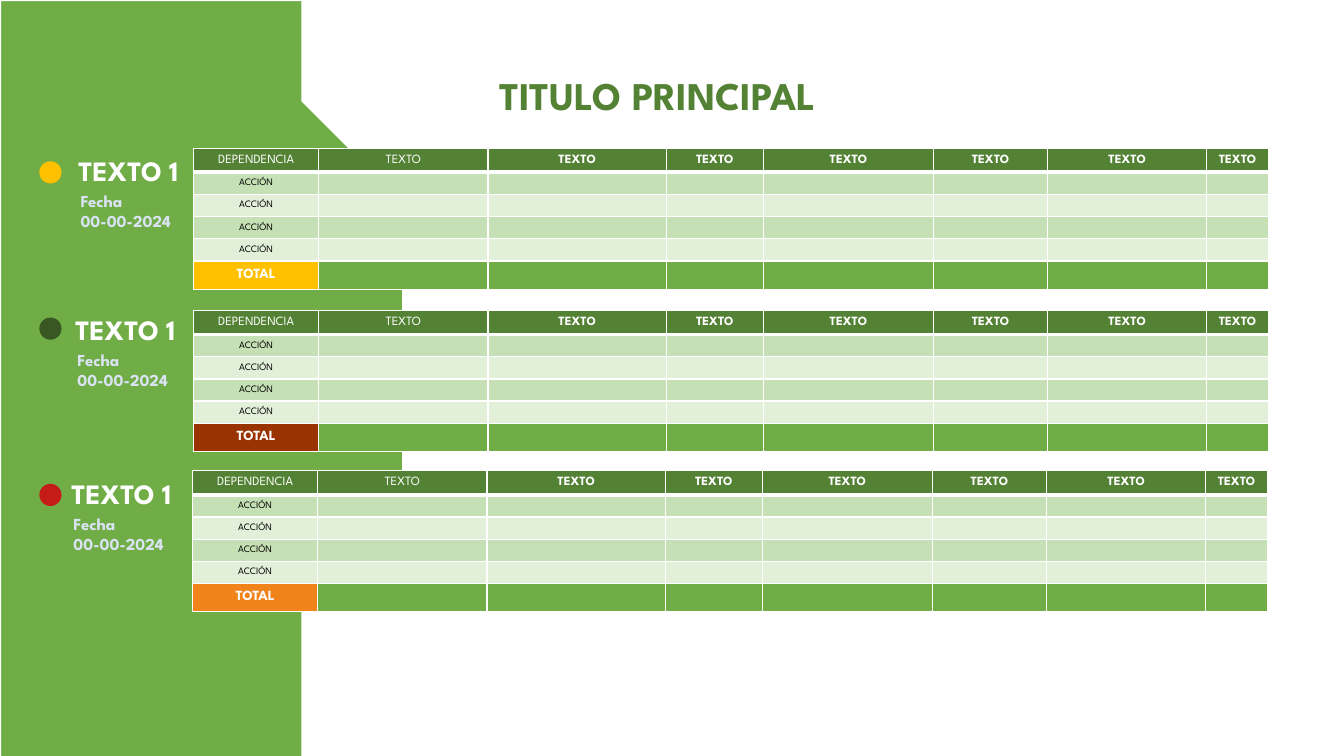
from lxml import etree
from pptx import Presentation
from pptx.dml.color import RGBColor
from pptx.enum.shapes import MSO_SHAPE
from pptx.enum.text import MSO_ANCHOR, MSO_AUTO_SIZE, PP_ALIGN
from pptx.oxml.ns import qn
from pptx.util import Inches, Pt

CENTER, LEFT = PP_ALIGN.CENTER, PP_ALIGN.LEFT
TOP, MIDDLE = MSO_ANCHOR.TOP, MSO_ANCHOR.MIDDLE
GROW = MSO_AUTO_SIZE.SHAPE_TO_FIT_TEXT
OVAL = MSO_SHAPE.OVAL

FONT = "League Spartan"
COLORS = {
    "green": "70AD47", "dark_green": "548235", "band": "C5E0B4",
    "light_band": "E2F0D9", "white": "FFFFFF", "black": "000000",
    "date": "DAE3F3", "yellow": "FFC000", "forest": "385723",
    "red": "C61C18", "brown": "993300", "orange": "F0831A",
}

COLUMN_WIDTHS = [1.24, 1.68, 1.77, 0.96, 1.69, 1.13, 1.58, 0.61]
ROW_HEIGHTS = [0.24] + [0.22] * 4 + [0.28]
HEADERS = ["DEPENDENCIA"] + ["TEXTO"] * 7
ROW_LABELS = ["ACCIÓN"] * 4 + ["TOTAL"]

# heading left and top, dot top, table left and top, dot and total colours
SECTIONS = [
    (0.68, 1.47, 1.60, 1.92, 1.47, "yellow", "yellow"),
    (0.65, 3.05, 3.15, 1.92, 3.08, "forest", "brown"),
    (0.61, 4.68, 4.80, 1.91, 4.67, "red", "orange"),
]


def rgb(name):
    return RGBColor.from_string(COLORS[name])


def paint(fill, name):
    fill.solid()
    fill.fore_color.rgb = rgb(name)


def write(paragraph, text, size, color, bold=True, align=LEFT):
    paragraph.alignment = align
    run = paragraph.add_run()
    run.text = text
    styles = {"name": FONT, "size": Pt(size), "bold": bold}
    for attribute, value in styles.items():
        setattr(run.font, attribute, value)
    run.font.color.rgb = rgb(color)


def bezier(start, control_1, control_2, end, steps=40):
    """Points along a cubic curve, both ends included."""
    points = []
    for step in range(steps + 1):
        t = step / steps
        weights = ((1 - t) ** 3, 3 * t * (1 - t) ** 2, 3 * t * t * (1 - t), t ** 3)
        points.append(tuple(
            sum(w * c for w, c in zip(weights, axis))
            for axis in zip(start, control_1, control_2, end)))
    return points


def add_side_panel(slide):
    upper = bezier((3.69, 3.99), (3.69, 2.52), (3.49, 1.16), (3.14, 0))
    lower = bezier((3.27, 7.5), (3.54, 6.45), (3.69, 5.26), (3.69, 3.99))
    outline = upper + [(0, 0), (0, 7.5)] + lower
    builder = slide.shapes.build_freeform(*outline[0], scale=Inches(1))
    builder.add_line_segments(outline[1:], close=True)
    panel = builder.convert_to_shape()
    panel.shadow.inherit = False
    paint(panel.fill, "green")
    panel.line.color.rgb = rgb("white")
    panel.line.width = Pt(1.5)


def add_title(slide, text):
    title = slide.shapes.title
    title.left, title.top = Inches(4.01), Inches(0.66)
    title.width, title.height = Inches(5.02), Inches(0.57)
    frame = title.text_frame
    frame.vertical_anchor = TOP
    frame.auto_size = GROW
    write(frame.paragraphs[0], text, 28, "dark_green", align=CENTER)


def add_label(slide, left, top, height, lines, size, color):
    box = slide.shapes.add_textbox(
        Inches(left), Inches(top), Inches(1.31), Inches(height))
    frame = box.text_frame
    frame.word_wrap = True
    frame.auto_size = GROW
    for index, line in enumerate(lines):
        paragraph = frame.add_paragraph() if index else frame.paragraphs[0]
        write(paragraph, line, size, color)


def add_dot(slide, top, color):
    dot = slide.shapes.add_shape(
        OVAL, Inches(0.39), Inches(top), Inches(0.22), Inches(0.22))
    dot.shadow.inherit = False
    paint(dot.fill, color)
    dot.line.fill.background()


def add_borders(cell, bottom):
    properties = cell._tc.get_or_add_tcPr()
    for side, width in (("L", 1), ("R", 1), ("T", 1), ("B", bottom)):
        line = etree.SubElement(properties, qn(f"a:ln{side}"), w=str(Pt(width)))
        solid = etree.SubElement(line, qn("a:solidFill"))
        etree.SubElement(solid, qn("a:srgbClr"), val=COLORS["white"])


def format_cell(cell, fill, bottom=1):
    """Apply borders, fill and margins, and keep an empty cell low."""
    add_borders(cell, bottom)
    paint(cell.fill, fill)
    cell.vertical_anchor = MIDDLE
    cell.margin_top = cell.margin_bottom = Inches(0.02)
    etree.SubElement(cell.text_frame.paragraphs[0]._p,
                     qn("a:endParaRPr"), sz="700")


def add_action_table(slide, left, top, total_color):
    table = slide.shapes.add_table(
        len(ROW_HEIGHTS), len(COLUMN_WIDTHS), Inches(left), Inches(top),
        Inches(sum(COLUMN_WIDTHS)), Inches(sum(ROW_HEIGHTS))).table
    table.first_row = table.horz_banding = False
    for column, width in zip(table.columns, COLUMN_WIDTHS):
        column.width = Inches(width)
    for row, height in zip(table.rows, ROW_HEIGHTS):
        row.height = Inches(height)

    for index, header in enumerate(HEADERS):
        cell = table.cell(0, index)
        format_cell(cell, "dark_green", bottom=3)
        write(cell.text_frame.paragraphs[0], header, 9, "white",
              bold=index > 1, align=CENTER)

    for row, label in enumerate(ROW_LABELS, start=1):
        is_total = label == "TOTAL"
        row_fill = "green" if is_total else "band" if row % 2 else "light_band"
        for column in range(len(COLUMN_WIDTHS)):
            highlighted = is_total and column == 0
            format_cell(table.cell(row, column),
                        total_color if highlighted else row_fill)
        size, color = (10, "white") if is_total else (7, "black")
        write(table.cell(row, 0).text_frame.paragraphs[0], label, size, color,
              bold=is_total, align=CENTER)


def main():
    prs = Presentation()
    prs.slide_width, prs.slide_height = Inches(13.33), Inches(7.5)
    slide = prs.slides.add_slide(prs.slide_layouts[5])
    add_side_panel(slide)
    add_title(slide, "TITULO PRINCIPAL")
    for left, top, dot_top, table_left, table_top, dot, total in SECTIONS:
        add_label(slide, left, top, 0.44, ["TEXTO 1"], 20, "white")
        add_label(slide, left + 0.02, top + 0.37, 0.5,
                  ["Fecha", "00-00-2024"], 12, "date")
        add_dot(slide, dot_top, dot)
        add_action_table(slide, table_left, table_top, total)
    prs.save("out.pptx")


if __name__ == "__main__":
    main()
